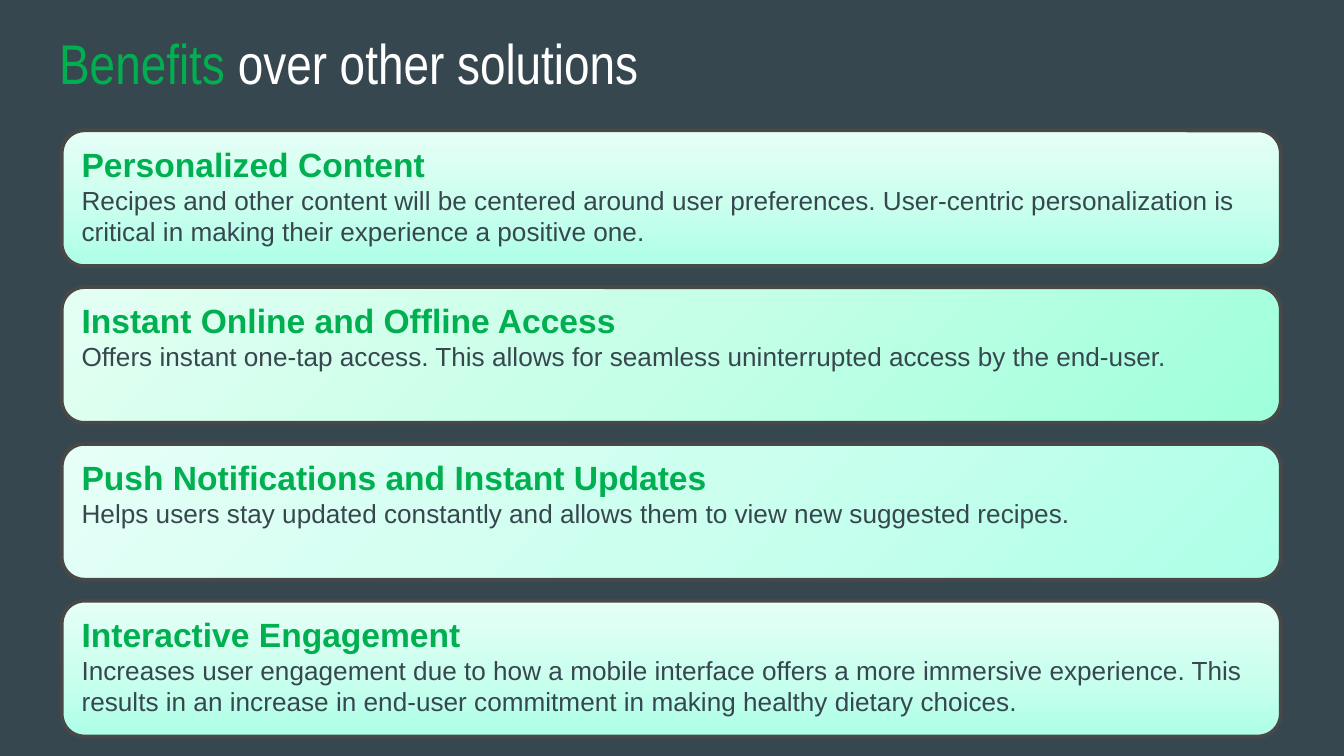
from copy import deepcopy

from pptx import Presentation
from pptx.dml.color import RGBColor
from pptx.enum.shapes import MSO_SHAPE
from pptx.enum.text import MSO_ANCHOR, MSO_AUTO_SIZE, PP_ALIGN
from pptx.oxml.ns import qn
from pptx.util import Inches, Pt

COLORS = {
    "background": "37474F",
    "accent": "00B050",
    "title": "FFFFFF",
    "body": "37474F",
    "border": "484848",
}
MINT = ("AEFFE7", "CDFFEF", "E6FFF7")
GREEN = ("A0FFDB", "C5FFE7", "E3FFF3")
UPWARD, DIAGONAL = 90, 135

TITLE = [("Benefits", "accent"), (" over other solutions", "title")]
BENEFITS = [
    ("Personalized Content",
     "Recipes and other content will be centered around user preferences. "
     "User-centric personalization is critical in making their experience a positive one.",
     MINT, UPWARD),
    ("Instant Online and Offline Access",
     "Offers instant one-tap access. This allows for seamless uninterrupted access by the end-user.",
     GREEN, DIAGONAL),
    ("Push Notifications and Instant Updates",
     "Helps users stay updated constantly and allows them to view new suggested recipes.",
     MINT, DIAGONAL),
    ("Interactive Engagement",
     "Increases user engagement due to how a mobile interface offers a more immersive experience. "
     "This results in an increase in end-user commitment in making healthy dietary choices.",
     MINT, UPWARD),
]
SLIDE_WIDTH = 10
CARD_LEFT, CARD_WIDTH, CARD_HEIGHT = 0.46, 9.07, 1.01
FIRST_TOP, LAST_TOP = 0.97, 4.47


def color(name):
    return RGBColor.from_string(COLORS[name])


def fill_gradient(shape, stops, angle):
    shape.fill.gradient()
    stop_list = shape._element.spPr.find(".//" + qn("a:gsLst"))
    stop_list.append(deepcopy(stop_list[0]))
    for index, (stop, value) in enumerate(zip(shape.fill.gradient_stops, stops)):
        stop.position = index / (len(stops) - 1)
        stop.color.rgb = RGBColor.from_string(value)
    shape.fill.gradient_angle = angle


def style_paragraph(paragraph, text, size, color_name, bold):
    paragraph.text = text
    paragraph.alignment = PP_ALIGN.LEFT
    paragraph.font.name = "Arial"
    paragraph.font.size = Pt(size)
    paragraph.font.bold = bold
    paragraph.font.color.rgb = color(color_name)


def add_title(slide):
    title = slide.shapes.title
    title.left, title.top = Inches(0.34), Inches(0.11)
    title.width, title.height = Inches(9.32), Inches(0.57)
    frame = title.text_frame
    frame.auto_size = MSO_AUTO_SIZE.NONE
    frame.vertical_anchor = MSO_ANCHOR.TOP
    frame.margin_left = frame.margin_right = Inches(0.1)
    frame.margin_top = frame.margin_bottom = Inches(0.1)
    paragraph = frame.paragraphs[0]
    paragraph.alignment = PP_ALIGN.LEFT
    paragraph.font.name = "Arial Narrow"
    paragraph.font.size = Pt(30)
    for text, color_name in TITLE:
        run = paragraph.add_run()
        run.text = text
        run.font.color.rgb = color(color_name)


def add_card(slide, top, heading, body, stops, angle):
    card = slide.shapes.add_shape(
        MSO_SHAPE.ROUNDED_RECTANGLE, Inches(CARD_LEFT), Inches(top),
        Inches(CARD_WIDTH), Inches(CARD_HEIGHT))
    card.shadow.inherit = False
    fill_gradient(card, stops, angle)
    card.line.color.rgb = color("border")
    card.line.width = Pt(2)
    frame = card.text_frame
    frame.word_wrap = True
    frame.vertical_anchor = MSO_ANCHOR.TOP
    style_paragraph(frame.paragraphs[0], heading, 18, "accent", True)
    style_paragraph(frame.add_paragraph(), body, 14, "body", False)


def main():
    presentation = Presentation()
    presentation.slide_width = Inches(SLIDE_WIDTH)
    presentation.slide_height = Inches(SLIDE_WIDTH * 9 / 16)
    slide = presentation.slides.add_slide(presentation.slide_layouts[5])
    slide.background.fill.solid()
    slide.background.fill.fore_color.rgb = color("background")
    add_title(slide)
    pitch = (LAST_TOP - FIRST_TOP) / (len(BENEFITS) - 1)
    for index, benefit in enumerate(BENEFITS):
        add_card(slide, FIRST_TOP + index * pitch, *benefit)
    presentation.save("out.pptx")


if __name__ == "__main__":
    main()
